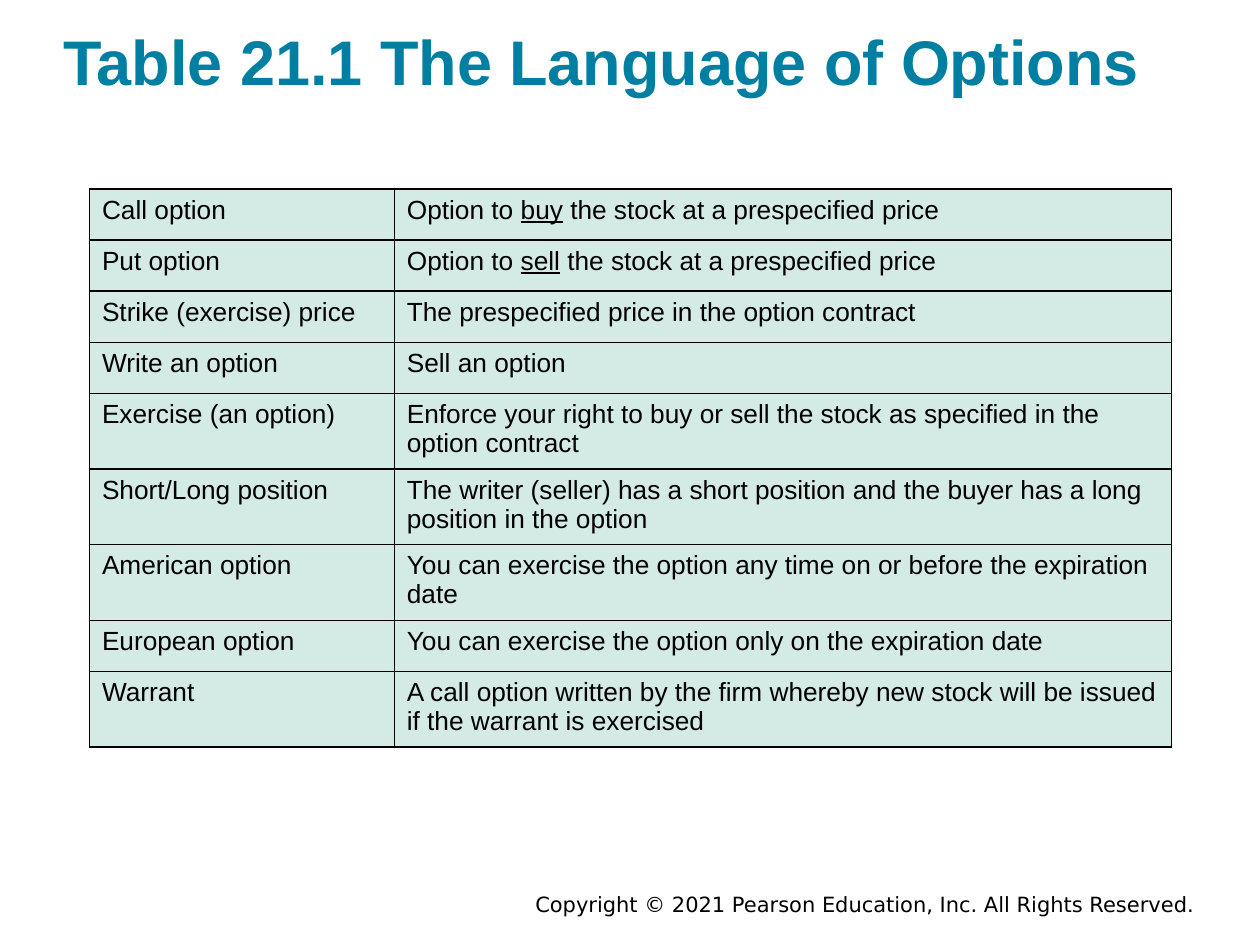
from typing import NamedTuple

from lxml import etree
from pptx import Presentation
from pptx.dml.color import RGBColor
from pptx.enum import text
from pptx.oxml import ns
from pptx.util import Pt

TEAL = RGBColor(0x00, 0x7F, 0xA3)
MINT = RGBColor(0xD4, 0xEA, 0xE4)
BLACK = RGBColor(0x00, 0x00, 0x00)
BODY_FONT = "Arial"
FOOTER_FONT = "DejaVu Sans"

TABLE_LEFT, TABLE_TOP = 51.1, 108
COL_WIDTHS = (174.2, 444.2)
ROW_HEIGHT = 29.2


class Term(NamedTuple):
    name: str
    meaning: str
    underlined: str = ""


TERMS = [
    Term("Call option", "Option to buy the stock at a prespecified price", "buy"),
    Term("Put option", "Option to sell the stock at a prespecified price", "sell"),
    Term("Strike (exercise) price", "The prespecified price in the option contract"),
    Term("Write an option", "Sell an option"),
    Term("Exercise (an option)",
         "Enforce your right to buy or sell the stock as specified in the option contract"),
    Term("Short/Long position",
         "The writer (seller) has a short position and the buyer has a long position in the option"),
    Term("American option",
         "You can exercise the option any time on or before the expiration date"),
    Term("European option", "You can exercise the option only on the expiration date"),
    Term("Warrant",
         "A call option written by the firm whereby new stock will be issued "
         "if the warrant is exercised"),
]


def add_run(p, words: str, size: float, color: RGBColor, font: str = BODY_FONT,
            bold: bool = False, underline: bool = False) -> None:
    r = p.add_run()
    r.text = words
    r.font.name = font
    r.font.size = Pt(size)
    r.font.bold = bold
    r.font.underline = underline
    r.font.color.rgb = color


def add_borders(cell, width: float = 1) -> None:
    """Give a cell a black line on all four sides, ahead of its fill."""
    tc_pr = cell._tc.get_or_add_tcPr()
    for i, side in enumerate(("lnL", "lnR", "lnT", "lnB")):
        ln = etree.Element(ns.qn(f"a:{side}"), w=str(int(Pt(width))))
        fill = etree.SubElement(ln, ns.qn("a:solidFill"))
        etree.SubElement(fill, ns.qn("a:srgbClr"), val=str(BLACK))
        tc_pr.insert(i, ln)


def fill_cell(cell, words: str, underlined: str = "") -> None:
    cell.fill.solid()
    cell.fill.fore_color.rgb = MINT
    add_borders(cell)
    p = cell.text_frame.paragraphs[0]
    parts = words.partition(underlined) if underlined else (words,)
    for part in parts:
        add_run(p, part, 15, BLACK, underline=part == underlined)


def add_title(s, words: str) -> None:
    sp = s.shapes.title
    sp.left, sp.top, sp.width, sp.height = Pt(36), Pt(5), Pt(648), Pt(59)
    tf = sp.text_frame
    tf.margin_left = tf.margin_top = tf.margin_right = tf.margin_bottom = 0
    tf.vertical_anchor = text.MSO_ANCHOR.MIDDLE
    tf.auto_size = text.MSO_AUTO_SIZE.NONE
    p = tf.paragraphs[0]
    p.alignment = text.PP_ALIGN.LEFT
    add_run(p, words, 36, TEAL, bold=True)


def add_terms(s, terms: list[Term]) -> None:
    table = s.shapes.add_table(
        len(terms), len(COL_WIDTHS), Pt(TABLE_LEFT), Pt(TABLE_TOP),
        Pt(sum(COL_WIDTHS)), Pt(ROW_HEIGHT * len(terms))).table
    table.first_row = table.horz_banding = False
    for column, width in zip(table.columns, COL_WIDTHS):
        column.width = Pt(width)
    for i, term in enumerate(terms):
        table.rows[i].height = Pt(ROW_HEIGHT)
        fill_cell(table.cell(i, 0), term.name)
        fill_cell(table.cell(i, 1), term.meaning, term.underlined)


def add_footer(s, words: str) -> None:
    tf = s.shapes.add_textbox(Pt(126), Pt(506), Pt(563.8), Pt(21.6)).text_frame
    tf.word_wrap = True
    p = tf.paragraphs[0]
    p.alignment = text.PP_ALIGN.RIGHT
    add_run(p, words, 12, BLACK, font=FOOTER_FONT)


def main() -> None:
    prs = Presentation()
    prs.slide_width, prs.slide_height = Pt(720), Pt(540)
    s = prs.slides.add_slide(prs.slide_layouts[5])  # title only

    add_footer(s, "Copyright © 2021 Pearson Education, Inc. All Rights Reserved.")
    add_title(s, "Table 21.1 The Language of Options")
    add_terms(s, TERMS)

    prs.save("out.pptx")


if __name__ == "__main__":
    main()
